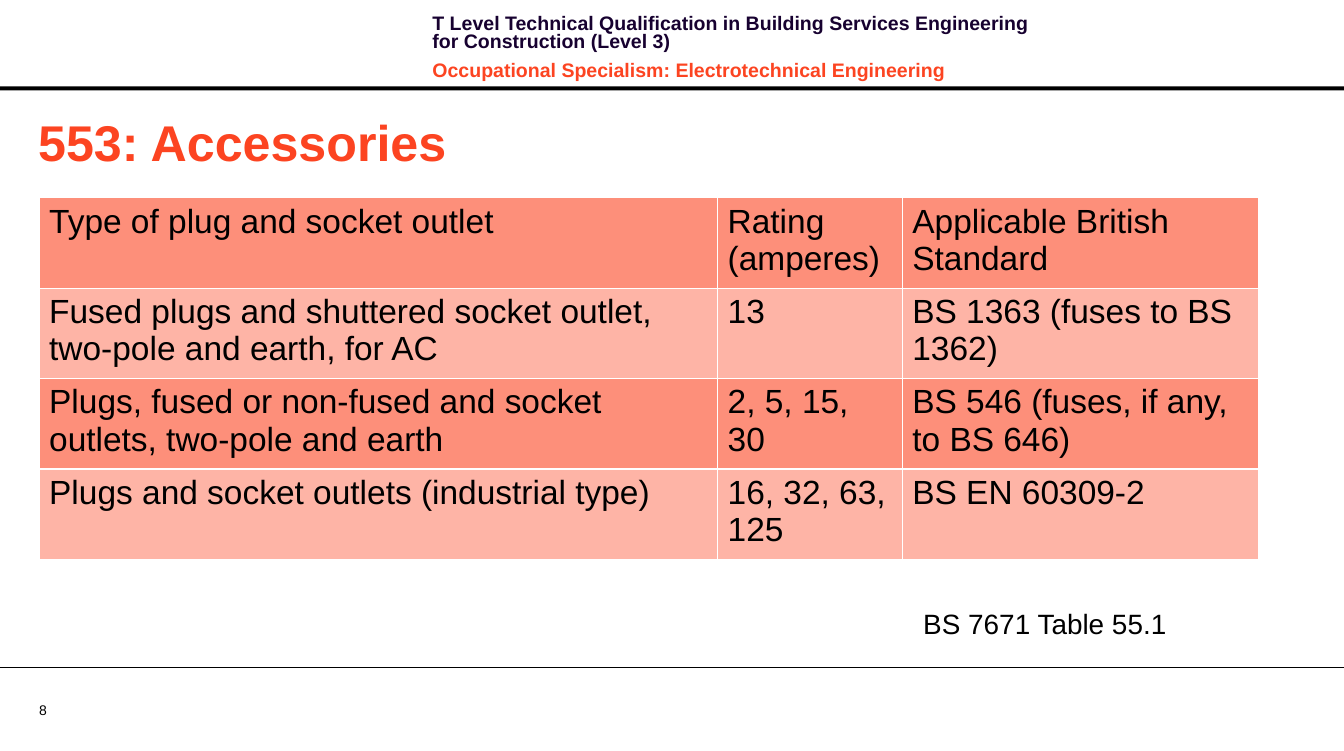
from lxml import etree
from pptx import Presentation
from pptx.dml.color import RGBColor
from pptx.enum import shapes, text
from pptx.oxml import parse_xml, ns
from pptx.util import Inches, Pt

BLACK = RGBColor(0x00, 0x00, 0x00)
NAVY = RGBColor(0x17, 0x01, 0x30)
RED = RGBColor(0xFC, 0x44, 0x21)
CORAL = RGBColor(0xFD, 0x8F, 0x7A)
PINK = RGBColor(0xFE, 0xB4, 0xA6)
WIDTH, HEIGHT = 13.39, 7.48

ROWS = [
    ("Type of plug and socket outlet", "Rating (amperes)",
     "Applicable British Standard"),
    ("Fused plugs and shuttered socket outlet, two-pole and earth, for AC",
     "13", "BS 1363 (fuses to BS 1362)"),
    ("Plugs, fused or non-fused and socket outlets, two-pole and earth",
     "2, 5, 15, 30", "BS 546 (fuses, if any, to BS 646)"),
    ("Plugs and socket outlets (industrial type)", "16, 32, 63, 125",
     "BS EN 60309-2"),
]


class Page:
    font = "Arial"

    def __init__(self, deck):
        self.slide = deck.slides.add_slide(deck.slide_layouts[5])
        self.shapes = self.slide.shapes

    def style(self, para, size, color=BLACK, bold=False):
        para.alignment = text.PP_ALIGN.LEFT
        font = para.font
        font.name, font.size, font.bold = self.font, Pt(size), bold
        font.color.rgb = color

    def title(self, words, box, size, color):
        shape = self.shapes.title
        shape.left, shape.top, shape.width, shape.height = map(Inches, box)
        frame = shape.text_frame
        frame.text = words
        frame.auto_size = text.MSO_AUTO_SIZE.NONE
        frame.vertical_anchor = text.MSO_ANCHOR.MIDDLE
        self.style(frame.paragraphs[0], size, color, True)

    def label(self, lines, box, size, bold=False, inset=None):
        """Add a text box; lines holds (words, color) pairs."""
        frame = self.shapes.add_textbox(*map(Inches, box)).text_frame
        frame.word_wrap = True
        if inset is not None:
            frame.margin_left = frame.margin_right = Inches(inset)
            frame.margin_top = frame.margin_bottom = Inches(inset)
        for i, (words, color) in enumerate(lines):
            para = frame.add_paragraph() if i else frame.paragraphs[0]
            para.text = words
            self.style(para, size, color, bold)
        return frame

    def line(self, y, width):
        rule = self.shapes.add_connector(
            shapes.MSO_CONNECTOR.STRAIGHT, 0, Inches(y), Inches(WIDTH), Inches(y))
        rule.line.color.rgb = BLACK
        rule.line.width = Pt(width)
        etree.SubElement(rule._element.spPr, ns.qn("a:effectLst"))

    def bar(self, y, height):
        band = self.shapes.add_shape(
            shapes.MSO_SHAPE.RECTANGLE, 0, Inches(y), Inches(WIDTH), Inches(height))
        band.shadow.inherit = False
        band.fill.solid()
        band.fill.fore_color.rgb = BLACK
        band.line.fill.background()

    def border(self, cell):
        """Draw white one-point lines on all sides of a cell."""
        props = cell._tc.get_or_add_tcPr()
        for i, side in enumerate(("lnL", "lnR", "lnT", "lnB")):
            props.insert(i, parse_xml(
                f'<a:{side} {ns.nsdecls("a")} w="12700"><a:solidFill>'
                f'<a:srgbClr val="FFFFFF"/></a:solidFill></a:{side}>'))

    def table(self, rows, left, top, widths, height, size):
        grid = self.shapes.add_table(
            len(rows), len(widths), Inches(left), Inches(top),
            Inches(sum(widths)), Inches(height * len(rows))).table
        for col, width in zip(grid.columns, widths):
            col.width = Inches(width)
        for r, row in enumerate(rows):
            for c, words in enumerate(row):
                cell = grid.cell(r, c)
                cell.text = words
                cell.fill.solid()
                cell.fill.fore_color.rgb = PINK if r % 2 else CORAL
                self.style(cell.text_frame.paragraphs[0], size)
                self.border(cell)


def main():
    deck = Presentation()
    deck.slide_width, deck.slide_height = Inches(WIDTH), Inches(HEIGHT)
    page = Page(deck)

    number = page.label([("8", BLACK)], (0.39, 6.99, 0.64, 0.17), 10, inset=0)
    number.vertical_anchor = text.MSO_ANCHOR.MIDDLE
    page.line(6.65, 0.75)
    page.bar(0.86, 0.04)

    head = page.label([
        ("T Level Technical Qualification in Building Services Engineering "
         "for Construction (Level 3)", NAVY),
        ("Occupational Specialism: Electrotechnical Engineering", RED),
    ], (4.21, 0.11, 6.37, 0.64), 14, bold=True)
    for para in head.paragraphs:
        para.line_spacing = Pt(13.1)
        para.space_after = Pt(4)
    head.paragraphs[1].space_before = Pt(4)

    page.title("553: Accessories", (0.28, 1.05, 12.72, 0.71), 36, RED)
    page.table(ROWS, 0.39, 1.97, (6.76, 1.84, 3.55), 0.84, 24)
    page.label([("BS 7671 Table 55.1", BLACK)], (9.1, 5.99, 2.97, 0.44), 20)
    deck.save("out.pptx")


if __name__ == "__main__":
    main()
